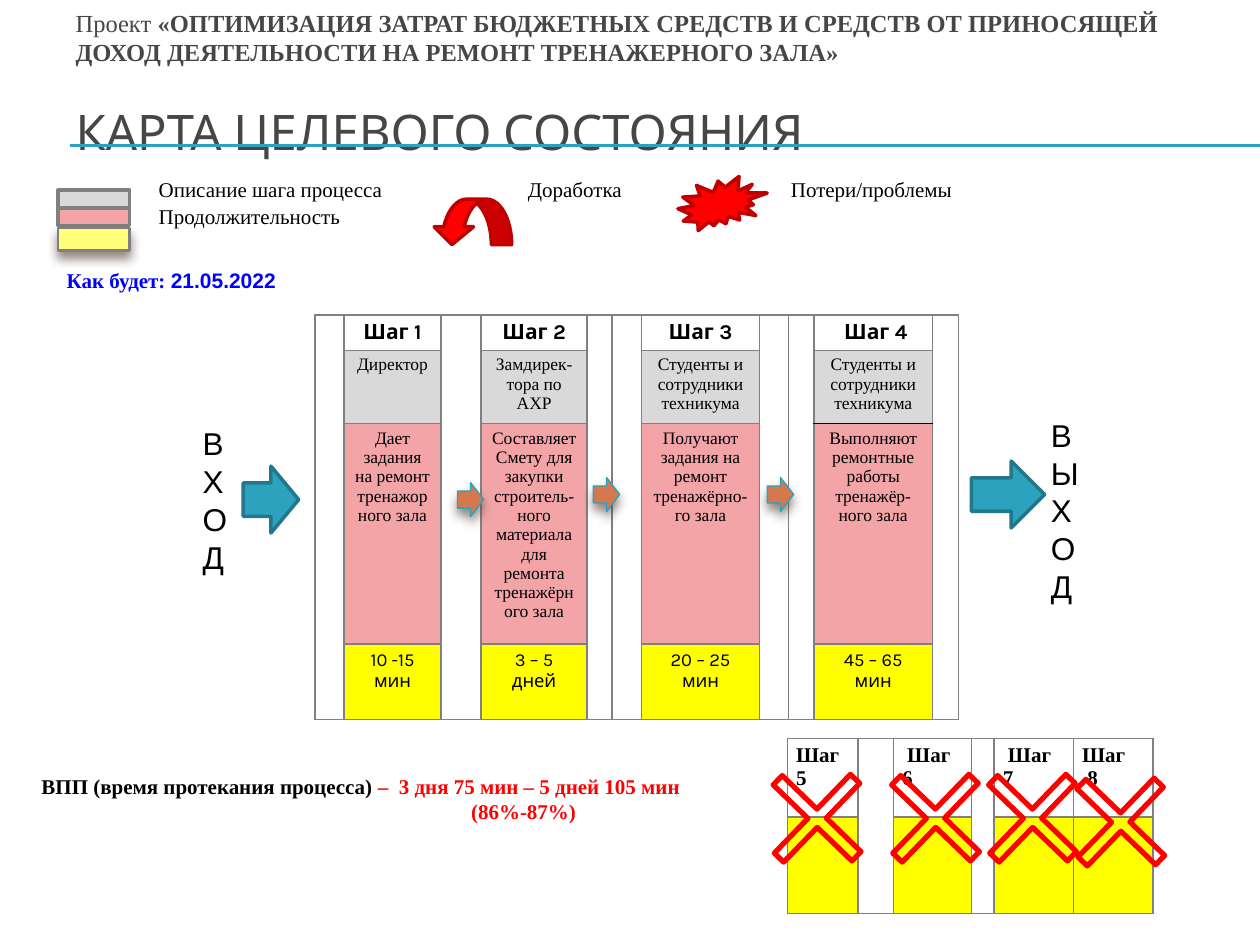
from lxml import etree
from pptx import Presentation
from pptx.dml.color import RGBColor
from pptx.enum.shapes import MSO_CONNECTOR, MSO_SHAPE as Preset
from pptx.enum.text import MSO_ANCHOR as Anchor, MSO_AUTO_SIZE as AutoSize, PP_ALIGN as Align
from pptx.oxml.ns import qn
from pptx.util import Pt

BLACK, WHITE = RGBColor(0, 0, 0), RGBColor(255, 255, 255)
HEADING = RGBColor(0x46, 0x46, 0x46)
GREY, STEP_GREY = RGBColor(0x80, 0x80, 0x80), RGBColor(0xD9, 0xD9, 0xD9)
PINK, YELLOW = RGBColor(0xF2, 0xA4, 0xA7), RGBColor(255, 255, 0)
PALE_YELLOW = RGBColor(255, 255, 0x79)
RED, DARK_RED = RGBColor(255, 0, 0), RGBColor(0xC0, 0, 0)
BLUE, TEAL, DARK_TEAL = RGBColor(0, 0, 255), RGBColor(0x2D, 0xA2, 0xBF), RGBColor(0x21, 0x78, 0x8D)
ORANGE = RGBColor(0xD6, 0x78, 0x4E)
SERIF, SANS, KARLA = "Times New Roman", "Arial", "Karla"
NO_STYLE = "{2D5ABB26-0587-4C30-8999-92F81FD0307C}"


class SlideBuilder:
    def __init__(self, presentation):
        self.slide = presentation.slides.add_slide(presentation.slide_layouts[5])
        self.shapes = self.slide.shapes

    def style(self, font, size=None, name=None, color=None, bold=None):
        if size:
            font.size = Pt(size)
        if name:
            font.name = name
        if color is not None:
            font.color.rgb = color
        if bold is not None:
            font.bold = bold

    def fill_text(self, frame, paragraphs, align=Align.LEFT, **base):
        """Each paragraph is a string or a list of (text, style changes)."""
        for index, content in enumerate(paragraphs):
            paragraph = frame.add_paragraph() if index else frame.paragraphs[0]
            paragraph.alignment = align
            self.style(paragraph.font, **base)
            runs = [(content, {})] if isinstance(content, str) else content
            for text, changes in runs:
                run = paragraph.add_run()
                run.text = text
                self.style(run.font, **changes)

    def title(self, left, top, width, height, paragraphs, **base):
        shape = self.shapes.title
        shape.left, shape.top, shape.width, shape.height = map(Pt, (left, top, width, height))
        frame = shape.text_frame
        frame.auto_size, frame.vertical_anchor = AutoSize.NONE, Anchor.TOP
        self.fill_text(frame, paragraphs, **base)
        return frame

    def text(self, left, top, width, height, paragraphs, inset=7.2, **base):
        frame = self.shapes.add_textbox(*map(Pt, (left, top, width, height))).text_frame
        frame.word_wrap = True
        frame.margin_left = frame.margin_right = Pt(inset)
        self.fill_text(frame, paragraphs, **base)
        return frame

    def line(self, x1, y1, x2, y2, color, width):
        line = self.shapes.add_connector(MSO_CONNECTOR.STRAIGHT, *map(Pt, (x1, y1, x2, y2)))
        line.line.color.rgb, line.line.width = color, Pt(width)
        etree.SubElement(line._element.spPr, qn("a:effectLst"))

    def shape(self, preset, left, top, width, height, fill, outline, weight,
              adjustments=(), rotation=0, flip=False, shadow=False):
        shape = self.shapes.add_shape(preset, *map(Pt, (left, top, width, height)))
        if fill is None:
            shape.fill.background()
        else:
            shape.fill.solid()
            shape.fill.fore_color.rgb = fill
        shape.line.color.rgb, shape.line.width = outline, Pt(weight)
        shape.rotation = rotation
        for index, value in enumerate(adjustments):
            shape.adjustments[index] = value
        shape.shadow.inherit = False
        properties = shape._element.spPr
        if flip:
            properties.find(qn("a:xfrm")).set("flipH", "1")
        if shadow:
            outer = etree.SubElement(properties.find(qn("a:effectLst")), qn("a:outerShdw"),
                                     blurRad=str(Pt(6)), dist=str(Pt(4)), dir="5400000", rotWithShape="0")
            color = etree.SubElement(outer, qn("a:srgbClr"), val="4E3B30")
            etree.SubElement(color, qn("a:alpha"), val="60000")

    def border(self, cell, **sides):
        properties = cell._tc.get_or_add_tcPr()
        for side in "LRTB":
            line = etree.SubElement(properties, qn("a:ln" + side), w=str(Pt(1)))
            fill = etree.SubElement(line, qn("a:solidFill"))
            etree.SubElement(fill, qn("a:srgbClr"), val=str(sides.get(side, GREY)))

    def table(self, left, top, columns, rows, inset=5.0):
        frame = self.shapes.add_table(len(rows), len(columns), Pt(left), Pt(top),
                                      Pt(sum(columns)), Pt(sum(rows)))
        table = frame.table
        table.first_row = table.horz_banding = False
        frame._element.find(".//" + qn("a:tableStyleId")).text = NO_STYLE
        for column, width in zip(table.columns, columns):
            column.width = Pt(width)
        for row, height in zip(table.rows, rows):
            row.height = Pt(height)
        for cell in table.iter_cells():
            cell.margin_left = cell.margin_right = Pt(inset)
            cell.margin_top = cell.margin_bottom = Pt(2.9)
        return table

    def cell(self, cell, paragraphs=(), fill=None, **base):
        if fill is None:
            cell.fill.background()
        else:
            cell.fill.solid()
            cell.fill.fore_color.rgb = fill
        if paragraphs:
            self.fill_text(cell.text_frame, paragraphs, **base)
        else:
            paragraph = cell.text_frame.paragraphs[0]._p
            etree.SubElement(paragraph, qn("a:endParaRPr"), sz="500")


def main():
    presentation = Presentation()
    presentation.slide_width, presentation.slide_height = Pt(720), Pt(540)
    builder = SlideBuilder(presentation)

    # Heading and rules
    for y in (82.8, 83.5):
        builder.line(40.3, y, 720, y, TEAL, 0.75)
    project = ("«ОПТИМИЗАЦИЯ ЗАТРАТ БЮДЖЕТНЫХ СРЕДСТВ И СРЕДСТВ ОТ ПРИНОСЯЩЕЙ "
               "ДОХОД ДЕЯТЕЛЬНОСТИ НА РЕМОНТ ТРЕНАЖЕРНОГО ЗАЛА»")
    heading = builder.title(36, 1, 675.4, 98, [
        [("Проект ", {}), (project, {"bold": True})],
        [("КАРТА ЦЕЛЕВОГО СОСТОЯНИЯ", {"size": 28, "name": KARLA})],
    ], size=14, name=SERIF, color=HEADING)
    heading.paragraphs[1].space_before = Pt(20)

    # Legend
    legend = builder.table(43.9, 54.7, [41.8, 160.6, 50.4, 368.6], [51.1, 15.1, 13])
    labels = {(1, 1): "Описание шага процесса", (1, 3): "Доработка\tПотери/проблемы",
              (2, 1): "Продолжительность"}
    legend.cell(0, 2).merge(legend.cell(2, 2))
    for row in range(3):
        for column in range(4):
            cell, label = legend.cell(row, column), labels.get((row, column))
            builder.cell(cell, [label] if label else (), size=12, name=SERIF, color=BLACK)
            if label:
                cell.text_frame.paragraphs[0].line_spacing = Pt(7)
    properties = legend.cell(1, 3).text_frame.paragraphs[0]._p.pPr
    tabs = etree.Element(qn("a:tabLst"))
    etree.SubElement(tabs, qn("a:tab"), pos=str(Pt(150.3)), algn="l")
    properties.find(qn("a:defRPr")).addprevious(tabs)
    builder.shape(Preset.RECTANGLE, 33.1, 108.7, 41, 10, STEP_GREY, GREY, 2)
    builder.shape(Preset.RECTANGLE, 33.1, 118.8, 41, 10, PINK, GREY, 2)
    builder.shape(Preset.RECTANGLE, 33.1, 130.3, 41, 13, PALE_YELLOW, GREY, 1.5, shadow=True)
    builder.shape(Preset.CURVED_DOWN_ARROW, 247, 113.8, 45.4, 26, RED, DARK_RED, 2,
                  adjustments=(0.447, 0.866, 0.393), flip=True)
    builder.shape(Preset.EXPLOSION2, 387.4, 100.8, 51, 31, RED, DARK_RED, 2)

    # Date
    date = builder.table(33.1, 151.2, [480.2], [25.2])
    builder.cell(date.cell(0, 0), [[("Как будет: ", {}), ("21.05.2022", {"name": SANS})]],
                 size=12, name=SERIF, color=BLUE, bold=True)

    # Removed steps
    removed = builder.table(450, 422, [40.3, 20.2, 44.6, 13, 45.4, 45.4], [45, 55])
    names = {0: ["Шаг 5"], 2: [" Шаг 6"], 4: [" Шаг 7"], 5: ["Шаг", " 8"]}
    for column in range(6):
        kept = column in names
        for row, fill in enumerate((WHITE, YELLOW)):
            cell = removed.cell(row, column)
            builder.border(cell)
            builder.cell(cell, names.get(column, ()) if row == 0 else (), fill if kept else None,
                         size=12, name=SERIF, color=BLACK, bold=True)
        if not kept:
            removed.cell(0, column).merge(removed.cell(1, column))
    for left, top in ((435.6, 436.3), (503.3, 436.3), (558.7, 436.3), (609.1, 438.5)):
        builder.shape(Preset.CROSS, left, top, 62.6, 62.6, None, RED, 3,
                      adjustments=(0.441,), rotation=44)

    # Process duration
    duration = builder.text(16.6, 438.5, 422, 36, [
        [("ВПП (время протекания процесса) ", {"color": BLACK}),
         ("–  3 дня 75 мин – 5 дней 105 мин", {})],
        "(86%-87%)",
    ], size=12, name=SERIF, color=RED, bold=True)
    duration.paragraphs[1]._p.get_or_add_pPr().set("marL", str(Pt(245.5)))

    # Process steps
    steps = builder.table(180, 180, [16.6, 55.4, 23, 60.5, 13, 16.6, 67.7, 16.6, 13, 67.7, 15],
                          [19.6, 41.5, 126, 43], inset=5.8)
    crew = "Студенты и сотрудники техникума"
    contents = {
        1: (["Шаг 1"], ["Директор"], ["Дает задания", "на ремонт тренажорного зала"], ["10 -15 мин"]),
        3: (["Шаг 2"], ["Замдирек-тора по АХР"],
            ["Составляет", "Смету для закупки строитель-ного материала для ремонта тренажёрного зала"],
            ["3 – 5 дней"]),
        6: (["Шаг 3"], [crew], ["Получают задания на ремонт тренажёрно-го зала"], ["20 – 25 мин"]),
        9: ([" Шаг 4"], [crew], ["Выполняют ремонтные работы тренажёр-ного зала"], ["45 – 65 мин"]),
    }
    row_styles = [(WHITE, 12, KARLA, True), (STEP_GREY, 10, SERIF, False),
                  (PINK, 10, SERIF, False), (YELLOW, 10.5, KARLA, False)]
    black_sides = {(1, 9): {"B": BLACK}, (2, 9): {"T": BLACK}}
    for column in range(11):
        for row, (fill, size, name, bold) in enumerate(row_styles):
            cell = steps.cell(row, column)
            builder.border(cell, **black_sides.get((row, column), {}))
            if column in contents:
                builder.cell(cell, contents[column][row], fill, align=Align.CENTER,
                             size=size, name=name, color=BLACK, bold=bold)
            else:
                builder.cell(cell)
        if column not in contents:
            steps.cell(0, column).merge(steps.cell(3, column))

    # Arrows between steps, then entry and exit
    for left, top in ((261.4, 275.8), (339.1, 272.9), (438.5, 272.9)):
        builder.shape(Preset.RIGHT_ARROW, left, top, 15, 19.4, ORANGE, TEAL, 0.79, shadow=True)
    builder.shape(Preset.RIGHT_ARROW, 139, 266.4, 31.7, 38.2, TEAL, DARK_TEAL, 2)
    builder.shape(Preset.RIGHT_ARROW, 555.1, 263.5, 41.8, 38.2, TEAL, DARK_TEAL, 2)
    builder.text(108.7, 239, 23.8, 94.3, ["ВХОД"], size=18, name=SANS, color=BLACK)
    builder.text(596.2, 234, 11.5, 116.6, ["ВЫХОД"], inset=4.3, size=18, name=SANS, color=BLACK)

    presentation.save("out.pptx")


if __name__ == "__main__":
    main()
